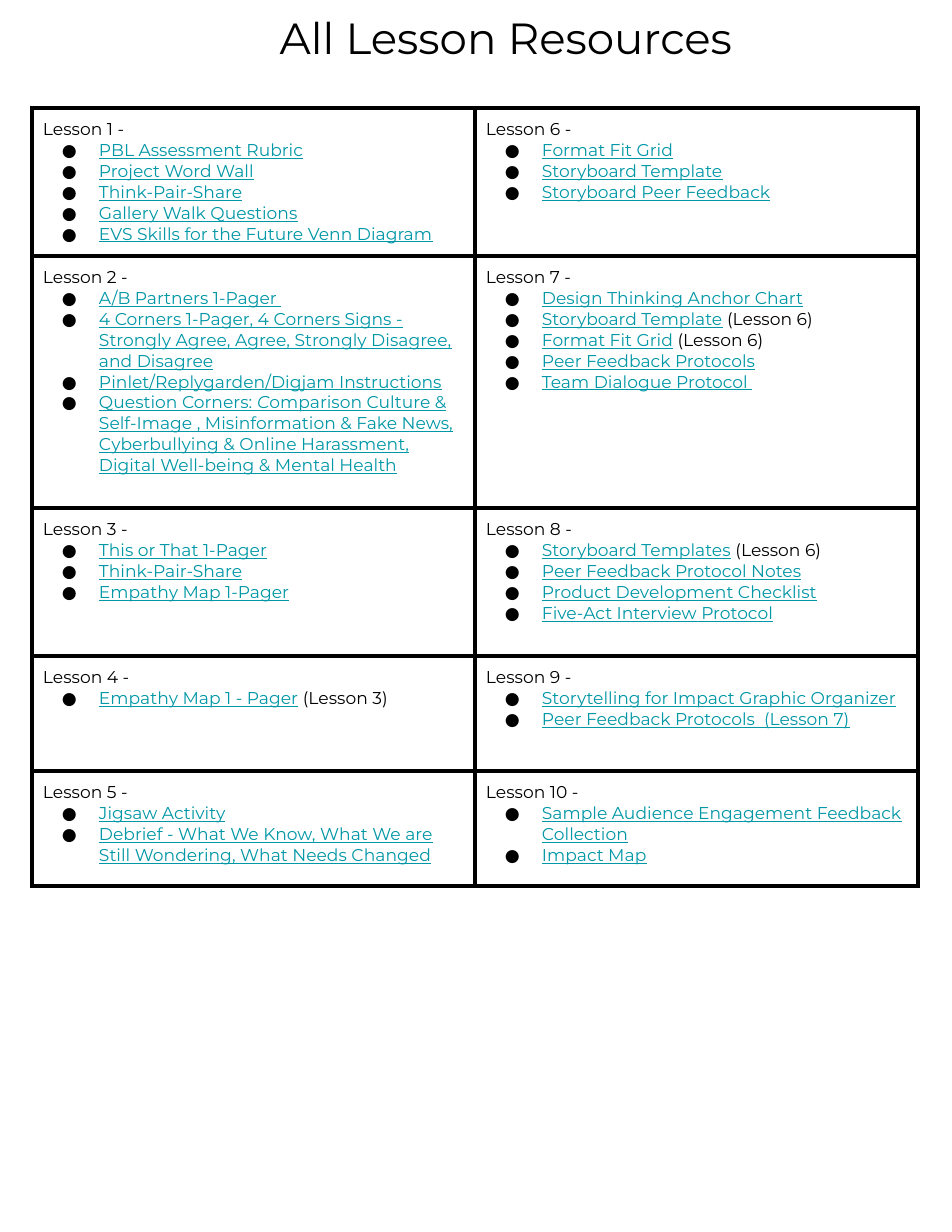
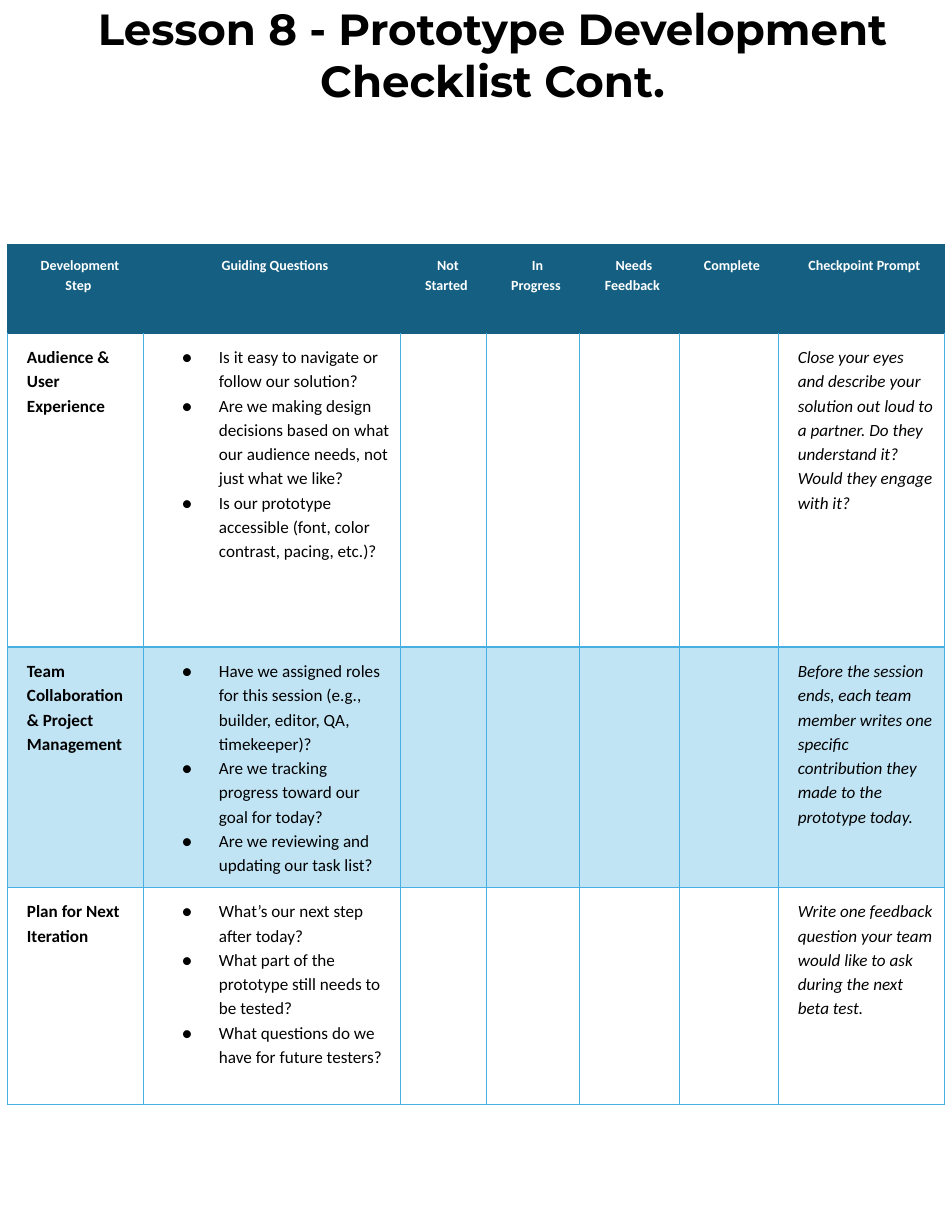
from dataclasses import dataclass
from lxml import etree
from pptx import Presentation
from pptx import util as u
from pptx.dml.color import RGBColor
from pptx.enum import text as t
from pptx.oxml import ns

SCALE = 914400 / 112


@dataclass(frozen=True)
class Theme:
    black: str = "000000"
    white: str = "FFFFFF"
    link: str = "0097A7"
    navy: str = "156082"
    sky: str = "45B0E1"
    pale: str = "C1E4F5"
    sans: str = "Montserrat"
    body: str = "Calibri"
    title: int = 28
    text: int = 11
    head: int = 9


THEME = Theme()
PAD = 11

# One pair per table row: left lesson, right lesson.
# "|" ends the linked part of an item; "*" encloses italics.
LESSONS = [
    (["PBL Assessment Rubric", "Project Word Wall", "Think-Pair-Share",
      "Gallery Walk Questions", "EVS Skills for the Future Venn Diagram"],
     ["Format Fit Grid", "Storyboard Template", "Storyboard Peer Feedback"]),
    (["A/B Partners 1-Pager ",
      "4 Corners 1-Pager, 4 Corners Signs - Strongly Agree, Agree, "
      "Strongly Disagree, and Disagree",
      "Pinlet/Replygarden/Digjam Instructions",
      "Question Corners: *C*omparison Culture & Self-Image , "
      "Misinformation & Fake News, Cyberbullying & Online Harassment, "
      "Digital Well-being & Mental Health"],
     ["Design Thinking Anchor Chart", "Storyboard Template| (Lesson 6)",
      "Format Fit Grid| (Lesson 6)", "Peer Feedback Protocols",
      "Team Dialogue Protocol "]),
    (["This or That 1-Pager", "Think-Pair-Share", "Empathy Map 1-Pager"],
     ["Storyboard Templates| (Lesson 6)", "Peer Feedback Protocol Notes",
      "Product Development Checklist", "Five-Act Interview Protocol"]),
    (["Empathy Map 1 - Pager| (Lesson 3)"],
     ["Storytelling for Impact Graphic Organizer",
      "Peer Feedback Protocols  (Lesson 7)"]),
    (["Jigsaw Activity",
      "Debrief - What We Know, What We are Still Wondering, "
      "What Needs Changed"],
     ["Sample Audience Engagement Feedback Collection", "Impact Map"]),
]

HEADS = ["Development Step ", "Guiding Questions ", "Not Started ",
         "In Progress ", "Needs Feedback ", "Complete ", "Checkpoint Prompt "]
STEPS = [
    ("Audience & User Experience",
     ["Is it easy to navigate or follow our solution?",
      "Are we making design decisions based on what our "
      "audience needs, not just what we like?",
      "Is our prototype accessible (font, color contrast, pacing, etc.)?"],
     "Close your eyes and describe your solution out loud to a partner. "
     "Do they understand it? Would they engage with it?"),
    ("Team Collaboration & Project Management",
     ["Have we assigned roles for this session (e.g., builder, editor, QA, "
      "timekeeper)?",
      "Are we tracking progress toward our goal for today?",
      "Are we reviewing and updating our task list?"],
     "Before the session ends, each team member writes one specific "
     "contribution they made to the prototype today."),
    ("Plan for Next Iteration",
     ["What’s our next step after today?",
      "What part of the prototype still needs to be tested?",
      "What questions do we have for future testers?"],
     "Write one feedback question your team would like to ask during the "
     "next beta test."),
]


def px(num):
    return u.Emu(round(num * SCALE))


def node(parent, tag, **attrs):
    item = etree.SubElement(parent, ns.qn(tag))
    for key, value in attrs.items():
        item.set(key, str(value))
    return item


def write(para, words, face=THEME.sans, size=THEME.text, color=THEME.black,
          bold=False, slant=False, under=False):
    """Add one formatted run to a paragraph."""
    run = para.add_run()
    run.text = words
    font = run.font
    font.name, font.size = face, u.Pt(size)
    font.color.rgb = RGBColor.from_string(color)
    font.bold, font.italic, font.underline = bold, slant, under


def line(cell, indent=0, align=t.PP_ALIGN.LEFT, space=None):
    """Return the next paragraph to fill in a cell."""
    frame = cell.text_frame
    para = frame.paragraphs[0]
    if para.runs:
        para = frame.add_paragraph()
    para.alignment = align
    if space:
        para.line_spacing = space
    props = para._p.get_or_add_pPr()
    props.set("marL", str(px(indent)))
    props.set("indent", "0")
    return para


def bullet(cell, indent, face, space=None):
    para = line(cell, indent, space=space)
    props = para._p.get_or_add_pPr()
    props.set("indent", str(px(-37)))
    node(node(props, "a:buClr"), "a:srgbClr", val=THEME.black)
    node(props, "a:buFont", typeface=face)
    node(props, "a:buChar", char="●")
    return para


def edge(cell, color, width, top=None):
    """Draw the four cell borders; top may have its own colour."""
    props = cell._tc.get_or_add_tcPr()
    for spot, side in enumerate("LRTB"):
        rim = node(props, f"a:ln{side}", w=u.Pt(width))
        tone = top if top and side == "T" else color
        node(node(rim, "a:solidFill"), "a:srgbClr", val=tone)
        props.insert(spot, rim)


def paint(cell, color):
    cell.fill.solid()
    cell.fill.fore_color.rgb = RGBColor.from_string(color)


def grid(slide, left, top, cols, rows):
    """Add a plain white table with the given column and row sizes."""
    table = slide.shapes.add_table(len(rows), len(cols), px(left), px(top),
                                   px(sum(cols)), px(sum(rows))).table
    table.first_row = table.horz_banding = False
    for col, wide in zip(table.columns, cols):
        col.width = px(wide)
    for row, high in zip(table.rows, rows):
        row.height = px(high)
    for cell in table.iter_cells():
        cell.margin_left = cell.margin_right = px(PAD)
        cell.margin_top = cell.margin_bottom = px(PAD)
        paint(cell, THEME.white)
    return table


def page(deck, words, left, top, bold=False):
    """Add a slide with its title."""
    slide = deck.slides.add_slide(deck.slide_layouts[5])
    title = slide.shapes.title
    title.left, title.top = px(left), px(top)
    title.width, title.height = px(887), px(137)
    frame = title.text_frame
    frame.word_wrap = True
    frame.auto_size = t.MSO_AUTO_SIZE.NONE
    frame.vertical_anchor = t.MSO_ANCHOR.TOP
    frame.margin_left = frame.margin_right = px(PAD)
    frame.margin_top = frame.margin_bottom = px(PAD)
    para = frame.paragraphs[0]
    para.alignment = t.PP_ALIGN.CENTER
    write(para, words, size=THEME.title, bold=bold)
    return slide


def lesson(cell, num, items):
    write(line(cell), f"Lesson {num} -")
    for item in items:
        para = bullet(cell, 56, THEME.sans)
        link, _, note = item.partition("|")
        for spot, part in enumerate(link.split("*")):
            write(para, part, color=THEME.link, under=True,
                  slant=spot % 2 == 1)
        if note:
            write(para, note)
    edge(cell, THEME.black, 3)


def list_page(deck):
    slide = page(deck, "All Lesson Resources ", 68, 0)
    table = grid(slide, 32, 108, [443] * 2, [148, 252, 148, 115, 115])
    for row, pair in enumerate(LESSONS):
        for col, items in enumerate(pair):
            num = row + 1 + col * len(LESSONS)
            lesson(table.cell(row, col), num, items)


def step(table, row, name, asks, prompt):
    look = {"face": THEME.body}
    write(line(table.cell(row, 0), 8, space=1.15), name, bold=True, **look)
    for ask in asks:
        para = bullet(table.cell(row, 1), 64, THEME.body, 1.15)
        write(para, ask, **look)
    last = table.cell(row, len(HEADS) - 1)
    write(line(last, 8, space=1.15), prompt, slant=True, **look)
    for cell in table.rows[row].cells:
        if row == 2:
            paint(cell, THEME.pale)
        edge(cell, THEME.sky, 0.75, THEME.navy if row == 1 else None)


def check_page(deck):
    slide = page(deck, "Lesson 8 - Prototype Development Checklist Cont.",
                 49, -9, bold=True)
    table = grid(slide, 8, 244, [136, 257, 86, 93, 100, 99, 166],
                 [89, 314, 240, 217])
    for cell, head in zip(table.rows[0].cells, HEADS):
        para = line(cell, 8, t.PP_ALIGN.CENTER, 1.15)
        write(para, head, face=THEME.body, size=THEME.head,
              color=THEME.white, bold=True)
        paint(cell, THEME.navy)
        edge(cell, THEME.navy, 0.75)
    for row, parts in enumerate(STEPS, 1):
        step(table, row, *parts)


def main():
    deck = Presentation()
    deck.slide_width, deck.slide_height = px(952), px(1232)
    list_page(deck)
    check_page(deck)
    deck.save("out.pptx")


if __name__ == "__main__":
    main()
